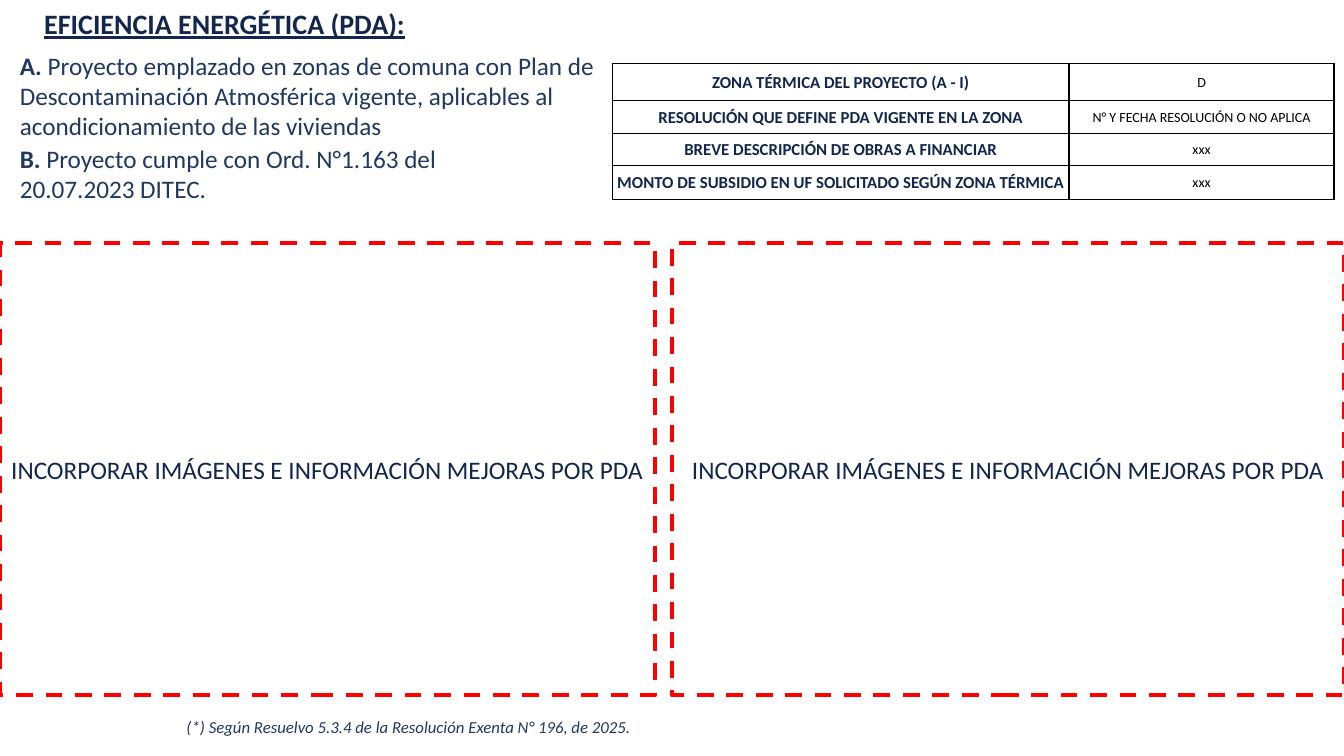
import pptx
import pptx.dml.color
import pptx.enum.dml
import pptx.enum.shapes
import pptx.enum.text
import pptx.oxml
import pptx.oxml.ns
import pptx.util
from pptx.util import Cm

NAVY = pptx.dml.color.RGBColor(0x12, 0x26, 0x4E)
BLUE = pptx.dml.color.RGBColor(0x20, 0x38, 0x64)
RED = pptx.dml.color.RGBColor(0xFF, 0x00, 0x00)
BLACK = pptx.dml.color.RGBColor(0x00, 0x00, 0x00)
ALIGN = pptx.enum.text.PP_ALIGN
MIDDLE = pptx.enum.text.MSO_ANCHOR.MIDDLE


def format_font(font, size, color, bold=None, italic=None):
    font.name = "Calibri"
    font.size = pptx.util.Pt(size)
    font.color.rgb = color
    font.bold = bold
    font.italic = italic


def add_cell_borders(cell):
    properties = cell._tc.get_or_add_tcPr()
    for side in ("lnL", "lnR", "lnT", "lnB"):
        properties.append(pptx.oxml.parse_xml(
            f'<a:{side} {pptx.oxml.ns.nsdecls("a")} w="12700"><a:solidFill>'
            f'<a:srgbClr val="{BLACK}"/></a:solidFill></a:{side}>'))


presentation = pptx.Presentation()
presentation.slide_width = Cm(33.87)
presentation.slide_height = Cm(19.05)
slide = presentation.slides.add_slide(presentation.slide_layouts[5])

# Title
title = slide.shapes.title
title.left, title.top, title.width, title.height = Cm(0.86), Cm(0.03), Cm(17.25), Cm(1.12)
title.text_frame.auto_size = pptx.enum.text.MSO_AUTO_SIZE.NONE
paragraph = title.text_frame.paragraphs[0]
paragraph.text = "EFICIENCIA ENERGÉTICA (PDA):"
paragraph.alignment = ALIGN.JUSTIFY
format_font(paragraph.font, 20, NAVY, bold=True)
paragraph.font.underline = True

# Requirements
requirements = [
    ("A. ", "Proyecto emplazado en zonas de comuna con Plan de Descontaminación Atmosférica "
     "vigente, aplicables al acondicionamiento de las viviendas", 1.14, 15.75, 2.57),
    ("B. ", "Proyecto cumple con Ord. N°1.163 del 20.07.2023 DITEC.", 3.48, 13.64, 1.8),
]
for letter, description, top, width, height in requirements:
    text_box = slide.shapes.add_textbox(Cm(0.25), Cm(top), Cm(width), Cm(height))
    text_box.text_frame.word_wrap = True
    paragraph = text_box.text_frame.paragraphs[0]
    format_font(paragraph.font, 18, BLUE)
    letter_run = paragraph.add_run()
    letter_run.text = letter
    letter_run.font.bold = True
    paragraph.add_run().text = description

# Thermal zone table
project_data = [
    ("ZONA TÉRMICA DEL PROYECTO (A - I)", "D"),
    ("RESOLUCIÓN QUE DEFINE PDA VIGENTE EN LA ZONA", "N° Y FECHA RESOLUCIÓN O NO APLICA"),
    ("BREVE DESCRIPCIÓN DE OBRAS A FINANCIAR", "xxx"),
    ("MONTO DE SUBSIDIO EN UF SOLICITADO SEGÚN ZONA TÉRMICA", "xxx"),
]
table = slide.shapes.add_table(4, 2, Cm(15.44), Cm(1.6), Cm(18.18), Cm(3.4)).table
table.first_row = False
table.horz_banding = False
for column, width in zip(table.columns, (11.5, 6.68)):
    column.width = Cm(width)
for row, height, texts in zip(table.rows, (0.94, 0.82, 0.82, 0.84), project_data):
    row.height = Cm(height)
    for cell, text, size, color, bold in zip(
            row.cells, texts, (12, 10), (NAVY, BLACK), (True, False)):
        cell.vertical_anchor = MIDDLE
        cell.margin_left = cell.margin_right = cell.margin_top = Cm(0.03)
        cell.margin_bottom = 0
        add_cell_borders(cell)
        cell.fill.background()
        paragraph = cell.text_frame.paragraphs[0]
        paragraph.text = text
        paragraph.alignment = ALIGN.CENTER
        format_font(paragraph.font, size, color, bold=bold)

# Dashed panels
for left, width in ((0, 16.5), (16.94, 16.93)):
    panel = slide.shapes.add_shape(
        pptx.enum.shapes.MSO_SHAPE.RECTANGLE, Cm(left), Cm(6.12), Cm(width), Cm(11.4))
    panel.shadow.inherit = False
    panel.fill.background()
    panel.line.color.rgb = RED
    panel.line.width = pptx.util.Pt(3)
    panel.line.dash_style = pptx.enum.dml.MSO_LINE.DASH
    panel.text_frame.word_wrap = True
    panel.text_frame.vertical_anchor = MIDDLE
    paragraph = panel.text_frame.paragraphs[0]
    paragraph.text = "INCORPORAR IMÁGENES E INFORMACIÓN MEJORAS POR PDA"
    paragraph.alignment = ALIGN.CENTER
    format_font(paragraph.font, 18, NAVY)

# Footnote
footnote = slide.shapes.add_textbox(Cm(4.45), Cm(17.93), Cm(11.84), Cm(0.77))
footnote.text_frame.word_wrap = False
paragraph = footnote.text_frame.paragraphs[0]
paragraph.text = "(*) Según Resuelvo 5.3.4 de la Resolución Exenta N° 196, de 2025."
format_font(paragraph.font, 12, BLUE, italic=True)

presentation.save("out.pptx")
